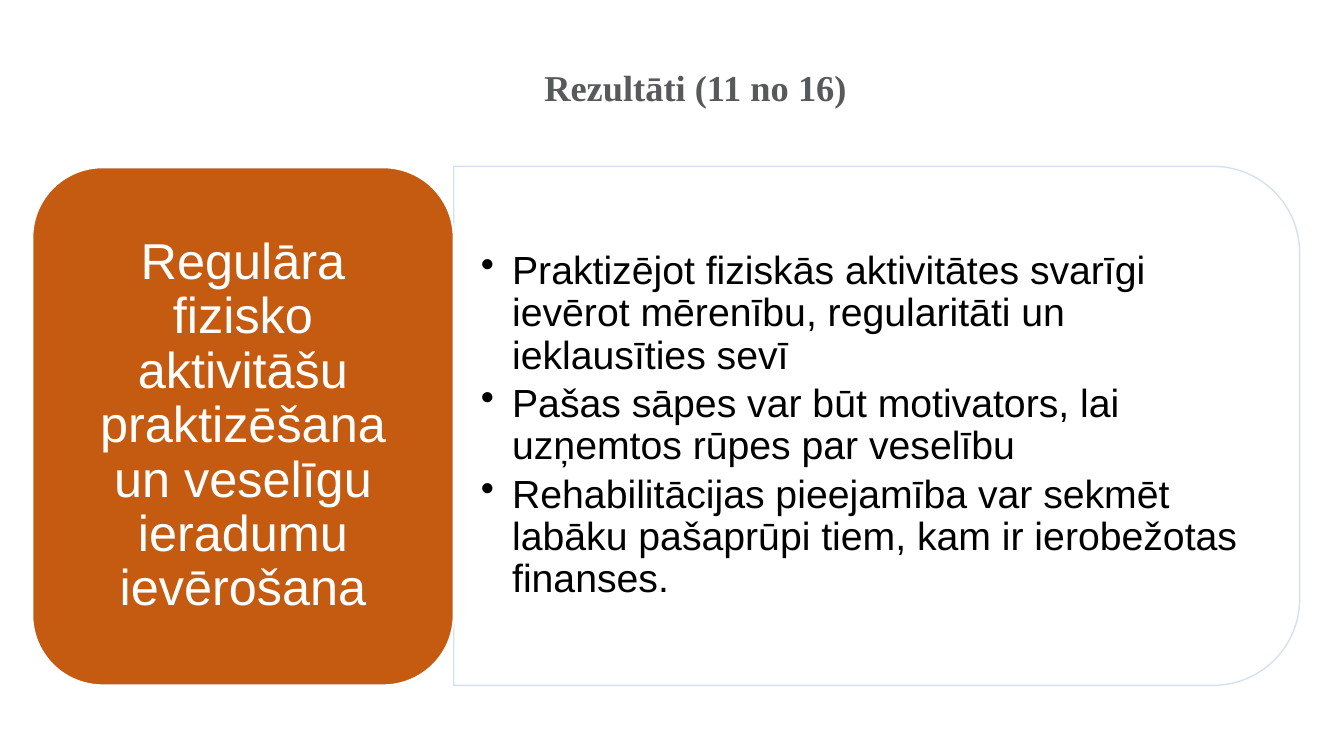
import pptx
import pptx.util
import pptx.dml.color
import pptx.enum.shapes
import pptx.enum.text
import pptx.oxml
import pptx.oxml.ns

Inches = pptx.util.Inches
Pt = pptx.util.Pt
RGB = pptx.dml.color.RGBColor
SHAPE = pptx.enum.shapes.MSO_SHAPE
ALIGN = pptx.enum.text.PP_ALIGN
ANCHOR = pptx.enum.text.MSO_ANCHOR
qn = pptx.oxml.ns.qn

GREY = RGB(0x58, 0x59, 0x5B)
ORANGE = RGB(0xC5, 0x5A, 0x11)
PALE = RGB(0xD2, 0xDE, 0xEF)
WHITE = RGB(0xFF, 0xFF, 0xFF)
BLACK = RGB(0x00, 0x00, 0x00)

TITLE = "Rezultāti (11 no 16)"
THEME = "Regulāra fizisko aktivitāšu praktizēšana un veselīgu ieradumu ievērošana"
POINTS = [
    "Praktizējot fiziskās aktivitātes svarīgi ievērot mērenību, regularitāti un ieklausīties sevī",
    "Pašas sāpes var būt motivators, lai uzņemtos rūpes par veselību",
    "Rehabilitācijas pieejamība var sekmēt labāku pašaprūpi tiem, kam ir ierobežotas finanses.",
]


def set_frame(frame, anchor, side, top):
    frame.word_wrap = True
    frame.auto_size = pptx.enum.text.MSO_AUTO_SIZE.NONE
    frame.vertical_anchor = anchor
    frame.margin_left = frame.margin_right = Inches(side)
    frame.margin_top = frame.margin_bottom = Inches(top)


def add_run(para, text, size, color, align, face="Arial", bold=False):
    para.alignment = align
    para.line_spacing = 0.9
    run = para.add_run()
    run.text = text
    run.font.name = face
    run.font.size = Pt(size)
    run.font.bold = bold
    run.font.color.rgb = color


def add_block(slide, kind, box, fill, line, width):
    shape = slide.shapes.add_shape(kind, *map(Inches, box))
    shape.shadow.inherit = False
    shape.fill.solid()
    shape.fill.fore_color.rgb = fill
    shape.line.color.rgb = line
    shape.line.width = Pt(width)
    return shape


def add_title(slide, box):
    title = slide.shapes.title
    title.left, title.top, title.width, title.height = map(Inches, box)
    set_frame(title.text_frame, ANCHOR.TOP, 0, 0)
    add_run(title.text_frame.paragraphs[0], TITLE, 26, GREY, ALIGN.CENTER,
            "Times New Roman", True)


def add_theme(slide, box):
    card = add_block(slide, SHAPE.ROUNDED_RECTANGLE, box, ORANGE, WHITE, 1.5)
    set_frame(card.text_frame, ANCHOR.MIDDLE, 0.15, 0.07)
    add_run(card.text_frame.paragraphs[0], THEME, 36, WHITE, ALIGN.CENTER)


def add_points(slide, box):
    left, top, width, height = box
    # Panel: an upright shape turned so its round corners face right
    shift = (width - height) / 2
    panel = add_block(slide, SHAPE.ROUND_2_SAME_RECTANGLE,
                      (left + shift, top - shift, height, width), WHITE, PALE, 1)
    panel.rotation = 90
    for color in panel._element.spPr.iter(qn("a:srgbClr")):
        alpha = pptx.oxml.parse_xml(
            f'<a:alpha {pptx.oxml.ns.nsdecls("a")} val="90000"/>')
        color.append(alpha)

    # Bulleted text, clear of the round corners
    inset = 0.25
    area = (left, top + inset, width - inset, height - 2 * inset)
    frame = slide.shapes.add_textbox(*map(Inches, area)).text_frame
    set_frame(frame, ANCHOR.MIDDLE, 0.27, 0.14)
    for i, text in enumerate(POINTS):
        para = frame.add_paragraph() if i else frame.paragraphs[0]
        props = para._p.get_or_add_pPr()
        props.set("marL", str(Inches(0.31)))
        props.set("indent", str(-Inches(0.31)))
        props.append(pptx.oxml.parse_xml(
            f'<a:buChar {pptx.oxml.ns.nsdecls("a")} char="•"/>'))
        para.level = 1
        para.space_after = Pt(4.2)
        add_run(para, text, 28, BLACK, ALIGN.LEFT)


def main():
    deck = pptx.Presentation()
    deck.slide_width, deck.slide_height = Inches(13.33), Inches(7.5)
    slide = deck.slides.add_slide(deck.slide_layouts[5])
    add_title(slide, (1.15, 0.7, 11.5, 1.13))
    add_points(slide, (4.5, 1.65, 8.39, 5.15))
    add_theme(slide, (0.32, 1.66, 4.18, 5.14))
    deck.save("out.pptx")


if __name__ == "__main__":
    main()
